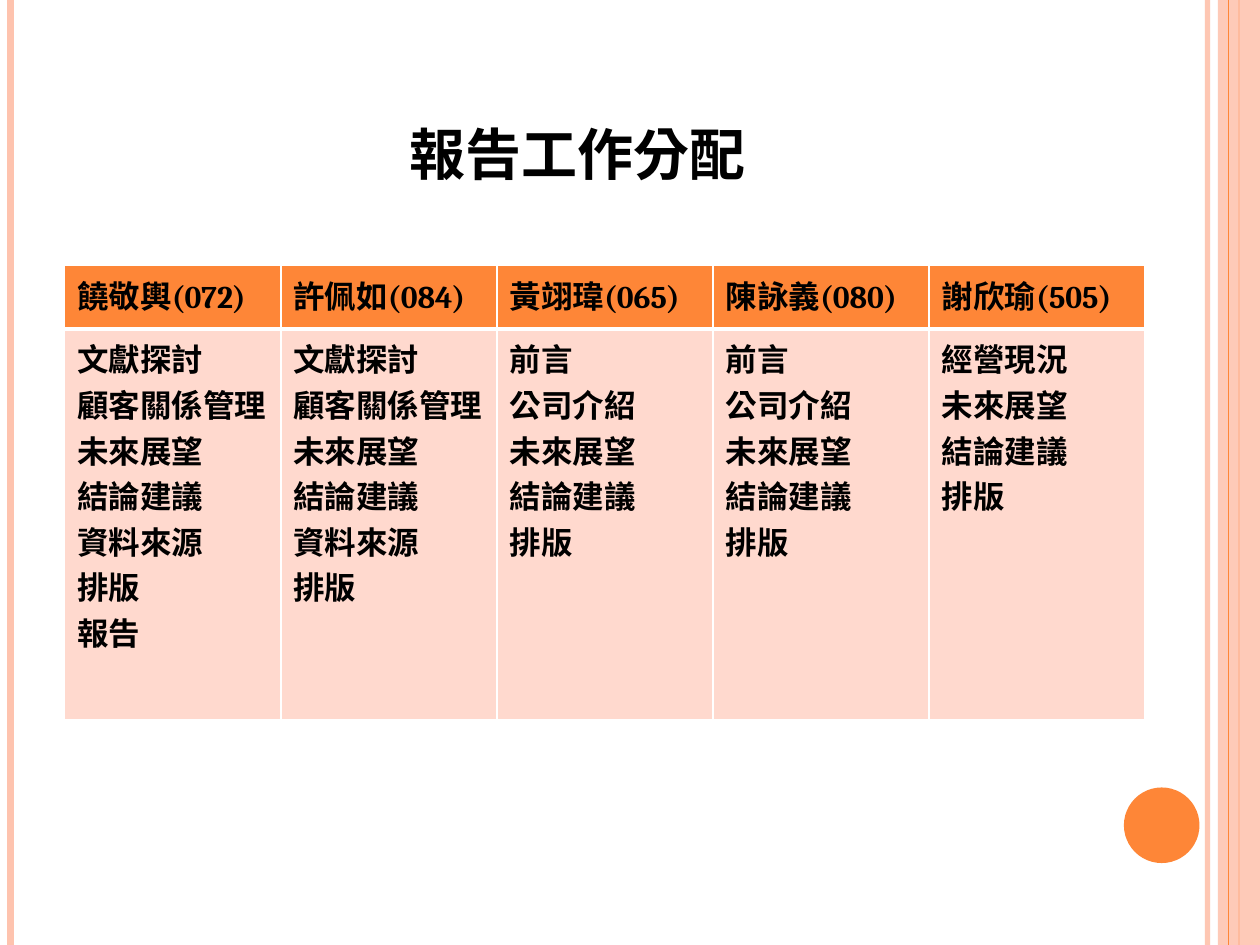
from pptx import Presentation
from pptx.dml.color import RGBColor
from pptx.enum import shapes, text
from pptx.oxml.ns import qn
from pptx.util import Pt
from lxml import etree

ORANGE = RGBColor(0xFE, 0x86, 0x37)
PEACH = RGBColor(0xFE, 0xC3, 0xAE)
BLUSH = RGBColor(0xFF, 0xD9, 0xCE)
WHITE = RGBColor(0xFF, 0xFF, 0xFF)
BLACK = RGBColor(0, 0, 0)

FONT = "Cambria"
WIDTH, HEIGHT = 720, 540

MEMBERS = [
    ("饒敬輿(072)", ["文獻探討", "顧客關係管理", "未來展望", "結論建議", "資料來源", "排版", "報告"]),
    ("許佩如(084)", ["文獻探討", "顧客關係管理", "未來展望", "結論建議", "資料來源", "排版"]),
    ("黃翊瑋(065)", ["前言", "公司介紹", "未來展望", "結論建議", "排版"]),
    ("陳詠義(080)", ["前言", "公司介紹", "未來展望", "結論建議", "排版"]),
    ("謝欣瑜(505)", ["經營現況", "未來展望", "結論建議", "排版"]),
]


def write_text(tf, lines, size=18, align=text.PP_ALIGN.LEFT, small_caps=False):
    """Fill a text frame with one bold paragraph per line."""
    for i, line in enumerate(lines):
        p = tf.paragraphs[0] if i == 0 else tf.add_paragraph()
        p.alignment = align
        r = p.add_run()
        r.text = line
        r.font.name = FONT
        r.font.size = Pt(size)
        r.font.bold = True
        r.font.color.rgb = BLACK
        rPr = r._r.get_or_add_rPr()
        rPr.set("lang", "zh-TW")
        if small_caps:
            rPr.set("cap", "small")


def set_opacity(parent, percent):
    color = next(parent.iter(qn("a:srgbClr")))
    etree.SubElement(color, qn("a:alpha")).set("val", str(percent * 1000))


def add_stripe(slide, x, color, width, opacity=100):
    """Draw a vertical line over the full slide height."""
    line = slide.shapes.add_connector(
        shapes.MSO_CONNECTOR.STRAIGHT, Pt(x), Pt(0), Pt(x), Pt(HEIGHT))
    line.line.color.rgb = color
    line.line.width = Pt(width)
    spPr = line._element.spPr
    etree.SubElement(spPr, qn("a:effectLst"))
    if opacity < 100:
        set_opacity(spPr, opacity)


def add_plain_shape(slide, kind, left, top, width, height, color, opacity=100):
    sp = slide.shapes.add_shape(kind, Pt(left), Pt(top), Pt(width), Pt(height))
    sp.shadow.inherit = False
    sp.fill.solid()
    sp.fill.fore_color.rgb = color
    sp.line.fill.background()
    if opacity < 100:
        set_opacity(sp._element.spPr, opacity)


def add_title(slide, title):
    box = slide.shapes.add_textbox(Pt(36), Pt(21.6), Pt(588), Pt(90))
    tf = box.text_frame
    tf.word_wrap = True
    tf.vertical_anchor = text.MSO_ANCHOR.BOTTOM
    write_text(tf, [title], size=40, align=text.PP_ALIGN.CENTER, small_caps=True)


def set_borders(cell, **widths):
    tcPr = cell._tc.get_or_add_tcPr()
    for side in "LRTB":
        ln = etree.SubElement(tcPr, qn(f"a:ln{side}"))
        ln.set("w", str(Pt(widths.get(side, 1))))
        fill = etree.SubElement(ln, qn("a:solidFill"))
        etree.SubElement(fill, qn("a:srgbClr")).set("val", str(WHITE))


def fill_cell(cell, lines, color, **borders):
    set_borders(cell, **borders)
    cell.fill.solid()
    cell.fill.fore_color.rgb = color
    write_text(cell.text_frame, lines)


def add_duty_table(slide):
    col_width, row_heights = 123.5, (36.5, 223.5)
    table = slide.shapes.add_table(
        len(row_heights), len(MEMBERS), Pt(37), Pt(151.5),
        Pt(col_width * len(MEMBERS)), Pt(sum(row_heights))).table
    for row, height in zip(table.rows, row_heights):
        row.height = Pt(height)
    for i, (name, duties) in enumerate(MEMBERS):
        table.columns[i].width = Pt(col_width)
        fill_cell(table.cell(0, i), [name], ORANGE, B=3)
        fill_cell(table.cell(1, i), duties, BLUSH, T=3)


def main():
    prs = Presentation()
    prs.slide_width, prs.slide_height = Pt(WIDTH), Pt(HEIGHT)
    slide = prs.slides.add_slide(prs.slide_layouts[6])

    add_stripe(slide, 690, PEACH, 3, opacity=93)
    add_stripe(slide, 6, PEACH, 4.5)
    add_stripe(slide, 708, ORANGE, 1.5)
    add_plain_shape(slide, shapes.MSO_SHAPE.RECTANGLE, 696, 0, 24, HEIGHT, PEACH, opacity=87)
    add_stripe(slide, 702, ORANGE, 0.75)
    add_plain_shape(slide, shapes.MSO_SHAPE.OVAL, 642.24, 450, 43.2, 43.2, ORANGE)

    add_title(slide, "報告工作分配")
    add_duty_table(slide)
    prs.save("out.pptx")


if __name__ == "__main__":
    main()
